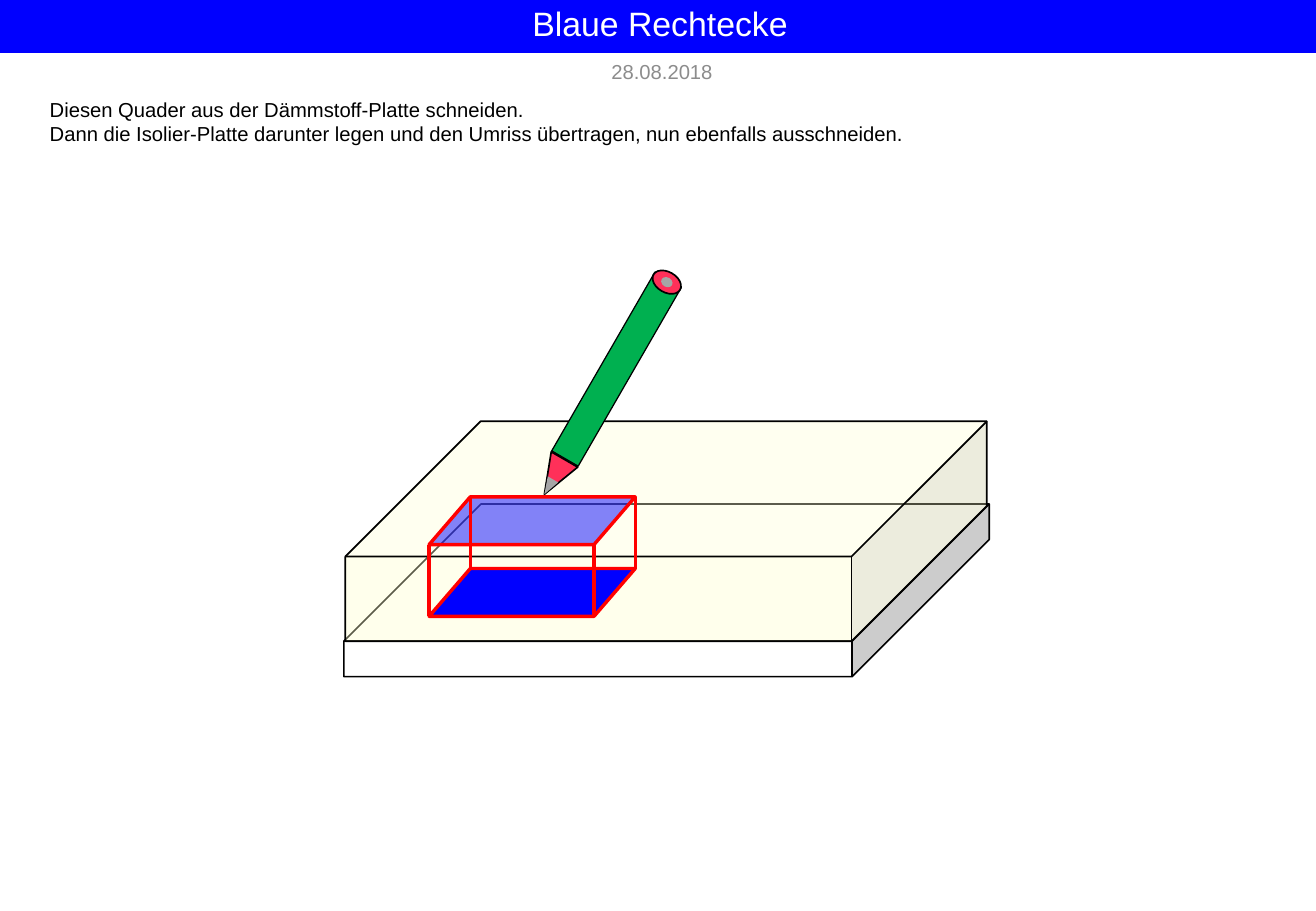
import math
from dataclasses import dataclass

import lxml.etree
import pptx
import pptx.dml.color
import pptx.enum.shapes
import pptx.enum.text
import pptx.oxml.ns
import pptx.util

Cm = pptx.util.Cm
Pt = pptx.util.Pt
SHAPE = pptx.enum.shapes.MSO_SHAPE
ALIGN = pptx.enum.text.PP_ALIGN
ANCHOR = pptx.enum.text.MSO_ANCHOR
qn = pptx.oxml.ns.qn


@dataclass(frozen=True)
class Theme:
    """Colours, font and type sizes of the slide."""
    font: str = "Arial"
    title_size: int = 20
    text_size: int = 12
    blue: str = "0000FF"
    red: str = "FF0000"
    black: str = "000000"
    white: str = "FFFFFF"
    date: str = "8C8C8C"
    foam: str = "FFFFCC"
    barrel: str = "00B050"
    wood: str = "FF3059"
    lead: str = "A6A6A6"


THEME = Theme()


def rgb(colour):
    """Return the colour object for a hex string."""
    return pptx.dml.color.RGBColor.from_string(colour)


def add_solid(shapes, kind, box, fill, line=None, width=1, opacity=100):
    """Add a preset shape in a box of centimetres with fill and outline."""
    shape = shapes.add_shape(kind, *map(Cm, box))
    shape.shadow.inherit = False
    shape.fill.solid()
    shape.fill.fore_color.rgb = rgb(fill)
    if opacity < 100:
        colour = shape.fill._xPr.find(".//" + qn("a:srgbClr"))
        lxml.etree.SubElement(colour, qn("a:alpha"), val=str(opacity * 1000))
    if line:
        shape.line.color.rgb = rgb(line)
        shape.line.width = Pt(width)
    else:
        shape.line.fill.background()
    return shape


def add_edge(shapes, start, end, colour, width):
    """Add a straight line between two points in centimetres."""
    line = shapes.add_connector(
        pptx.enum.shapes.MSO_CONNECTOR.STRAIGHT, *map(Cm, start + end))
    line.line.color.rgb = rgb(colour)
    line.line.width = Pt(width)
    lxml.etree.SubElement(line._element.spPr, qn("a:effectLst"))


def write(shape, lines, size, colour, align, anchor, spacing=1.0):
    """Write one paragraph per line into a shape."""
    frame = shape.text_frame
    frame.word_wrap = True
    frame.vertical_anchor = anchor
    for index, line in enumerate(lines):
        paragraph = frame.add_paragraph() if index else frame.paragraphs[0]
        paragraph.alignment = align
        paragraph.line_spacing = spacing
        run = paragraph.add_run()
        run.text = line
        run.font.name = THEME.font
        run.font.size = Pt(size)
        run.font.color.rgb = rgb(colour)


def add_title(shapes, box):
    """Draw the title bar."""
    bar = add_solid(shapes, SHAPE.RECTANGLE, box, THEME.blue, THEME.blue, 0.75)
    write(bar, ["Blaue Rechtecke"], THEME.title_size, THEME.white,
          ALIGN.CENTER, ANCHOR.MIDDLE, 0.9)


def add_text(shapes, box, lines, colour, align, anchor):
    """Add a text box with one paragraph per line."""
    write(shapes.add_textbox(*map(Cm, box)), lines, THEME.text_size, colour, align, anchor)


def add_plates(shapes, box):
    """Draw the white plate with the translucent foam plate on top."""
    left, top, width, height = box
    plates = [
        ((left, top + 1.73, width, height - 1.73), 0.794, THEME.white, 100),
        ((left + 0.03, top, width - 0.08, height - 0.74), 0.615, THEME.foam, 36),
    ]
    for plate_box, depth, fill, opacity in plates:
        plate = add_solid(shapes, SHAPE.CUBE, plate_box, fill, THEME.black, 1, opacity)
        plate.adjustments[0] = depth


def add_pencil(shapes, box, tilt=30):
    """Draw the pencil, its parts lined up on a tilted axis through the box centre."""
    left, top, width, height = box
    centre_x, centre_y = left + width / 2, top + height / 2
    angle = math.radians(tilt)
    pencil = shapes.add_group_shape().shapes
    parts = [
        (SHAPE.RECTANGLE, 0, width, height, THEME.barrel, THEME.black, 0.75, 0),
        (SHAPE.OVAL, 2.1, width, 0.43, THEME.wood, THEME.black, 1, 0),
        (SHAPE.OVAL, 2.1, 0.25, 0.2, THEME.lead, None, 0, 0),
        (SHAPE.ISOSCELES_TRIANGLE, -2.6, width, 0.84, THEME.wood, THEME.black, 1, 180),
        (SHAPE.ISOSCELES_TRIANGLE, -2.84, 0.25, 0.36, THEME.lead, None, 0, 180),
    ]
    for kind, along, part_width, part_height, fill, line, weight, turn in parts:
        x = centre_x + along * math.sin(angle) - part_width / 2
        y = centre_y - along * math.cos(angle) - part_height / 2
        part = add_solid(pencil, kind, (x, y, part_width, part_height), fill, line, weight)
        part.rotation = tilt + turn


def add_block(shapes, box, depth):
    """Draw the block to cut out: two slanted faces joined by four edges."""
    left, top, width, height = box
    for drop, opacity in ((depth, 100), (0, 49)):
        add_solid(shapes, SHAPE.FLOWCHART_DATA, (left, top + drop, width, height),
                  THEME.blue, THEME.red, 2, opacity)
    corners = [(0, height), (width, 0), (width / 5, 0), (width * 4 / 5, height)]
    for x, y in corners:
        add_edge(shapes, (left + x, top + y), (left + x, top + y + depth), THEME.red, 2)


def main():
    """Build the slide and save it."""
    presentation = pptx.Presentation()
    presentation.slide_width = Cm(27.51)
    presentation.slide_height = Cm(19.05)
    slide = presentation.slides.add_slide(presentation.slide_layouts[6])
    shapes = slide.shapes
    add_title(shapes, (0, 0, 27.6, 1.09))
    add_text(shapes, (12.19, 1.09, 3.3, 0.79), ["28.08.2018"],
             THEME.date, ALIGN.CENTER, ANCHOR.MIDDLE)
    add_text(shapes, (0.79, 1.91, 26.01, 2.01), [
        "Diesen Quader aus der Dämmstoff-Platte schneiden.",
        "Dann die Isolier-Platte darunter legen und den Umriss übertragen, "
        "nun ebenfalls ausschneiden.",
    ], THEME.black, ALIGN.LEFT, ANCHOR.TOP)
    add_plates(shapes, (7.19, 8.81, 13.49, 5.34))
    add_pencil(shapes, (12.57, 5.56, 0.64, 4.32))
    add_block(shapes, (8.97, 10.39, 4.31, 1), 1.5)
    presentation.save("out.pptx")


if __name__ == "__main__":
    main()
